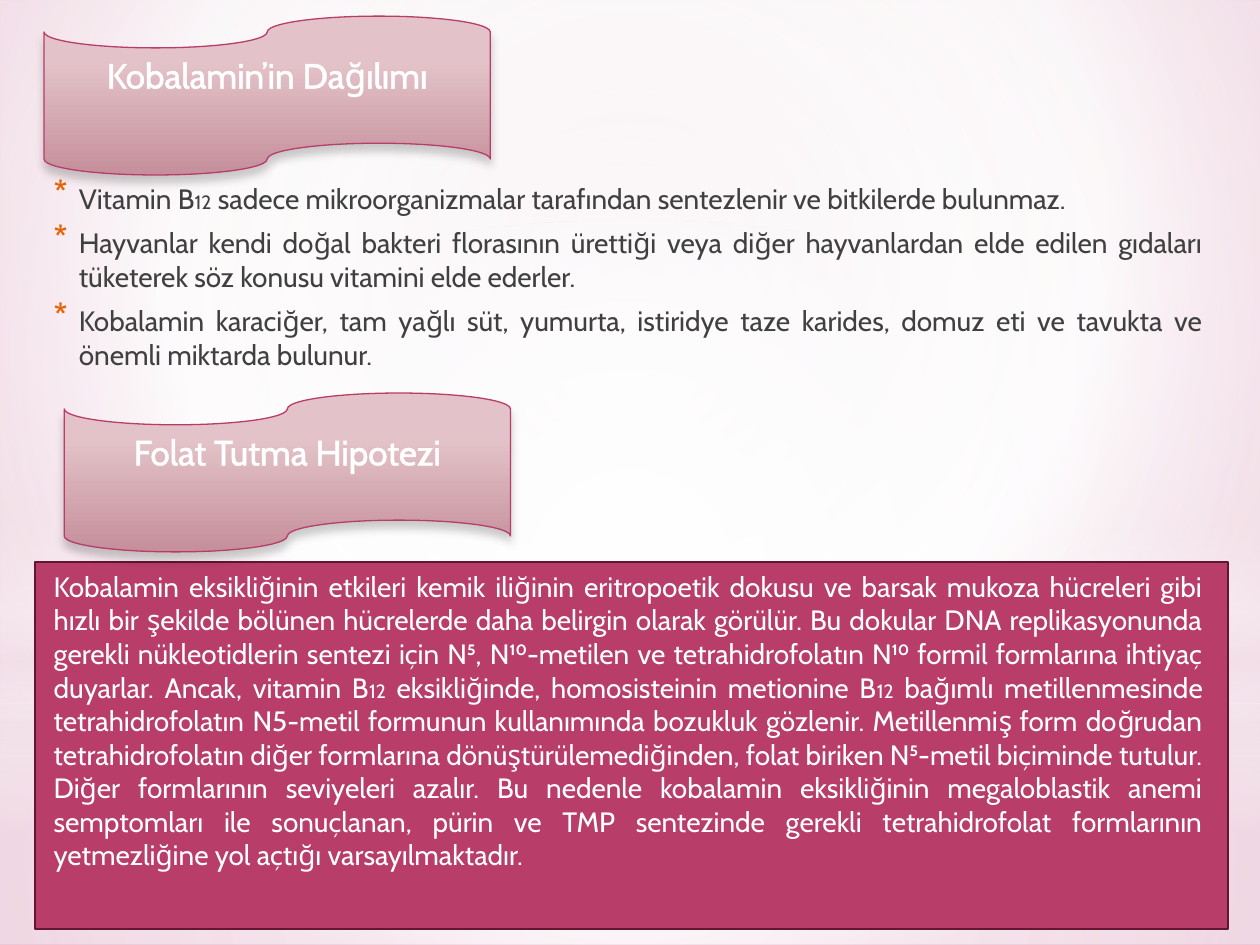
from dataclasses import dataclass

from lxml import etree
from pptx import Presentation
from pptx.dml.color import RGBColor
from pptx.enum.shapes import MSO_SHAPE
from pptx.enum.text import MSO_ANCHOR, MSO_AUTO_SIZE, PP_ALIGN
from pptx.oxml import parse_xml
from pptx.oxml.ns import qn
from pptx.util import Pt

RECT, ELLIPSE, TAPE = MSO_SHAPE.RECTANGLE, MSO_SHAPE.OVAL, MSO_SHAPE.FLOWCHART_PUNCHED_TAPE
JUSTIFY, CENTER = PP_ALIGN.JUSTIFY, PP_ALIGN.CENTER
TOP, MIDDLE = MSO_ANCHOR.TOP, MSO_ANCHOR.MIDDLE
DRAWING_NS = 'xmlns:a="http://schemas.openxmlformats.org/drawingml/2006/main"'
CENTERED = (50, 50, 50, 50)


@dataclass(frozen=True)
class Theme:
    font: str = "Cabin"
    white: str = "FFFFFF"
    ink: str = "404040"
    accent: str = "B83D68"
    accent_dark: str = "621631"
    bullet: str = "E36406"
    tint: str = "F4E7ED"
    heading_size: float = 20
    body_size: float = 16
    index_size: float = 11


@dataclass(frozen=True)
class Box:
    left: float
    top: float
    width: float
    height: float

    def lengths(self):
        return Pt(self.left), Pt(self.top), Pt(self.width), Pt(self.height)


@dataclass(frozen=True)
class Glow:
    shape: int
    box: Box
    stops: tuple  # (position %, colour, opacity %)
    focus: tuple = ()  # left, top, right, bottom %; empty means top to bottom


THEME = Theme()
W, T = THEME.white, THEME.tint
BACKDROP = ((0, "EDDAE2", 100), (60, W, 100), (100, "E09DBC", 100))
BANNER_STOPS = ((28, "E3C3C9", 100), (100, "C58F9B", 100))
GLOWS = (
    Glow(RECT, Box(0, 402, 720, 138), ((0, W, 91), (37, W, 76), (100, T, 79)), CENTERED),
    Glow(RECT, Box(0, 0, 720, 402), ((0, W, 89), (48, W, 62), (100, T, 79)), CENTERED),
    Glow(RECT, Box(0, 296.6, 720, 180),
         ((0, W, 0), (29, W, 30), (45, T, 40), (55, W, 26), (65, T, 60), (100, W, 0))),
    Glow(ELLIPSE, Box(0, 126, 720, 402), ((0, W, 100), (56, W, 0)), CENTERED),
)

# A paragraph is a list of strings; every second one is a small index
DISTRIBUTION = [
    ["Vitamin B", "12", " sadece mikroorganizmalar tarafından sentezlenir ve bitkilerde bulunmaz."],
    ["Hayvanlar kendi doğal bakteri florasının ürettiği veya diğer hayvanlardan elde edilen "
     "gıdaları tüketerek söz konusu vitamini elde ederler."],
    ["Kobalamin karaciğer, tam yağlı süt, yumurta, istiridye taze karides, domuz eti ve tavukta "
     "ve önemli miktarda bulunur."],
]
HYPOTHESIS = [[
    "Kobalamin eksikliğinin etkileri kemik iliğinin eritropoetik dokusu ve barsak mukoza "
    "hücreleri gibi hızlı bir şekilde bölünen hücrelerde daha belirgin olarak görülür. Bu "
    "dokular DNA replikasyonunda gerekli nükleotidlerin sentezi için N⁵, N¹⁰-metilen ve "
    "tetrahidrofolatın N¹⁰ formil formlarına ihtiyaç duyarlar. Ancak, vitamin B",
    "12",
    " eksikliğinde, homosisteinin metionine B",
    "12",
    " bağımlı metillenmesinde tetrahidrofolatın N5-metil formunun kullanımında bozukluk "
    "gözlenir. Metillenmiş form doğrudan tetrahidrofolatın diğer formlarına "
    "dönüştürülemediğinden, folat biriken N⁵-metil biçiminde tutulur. Diğer formlarının "
    "seviyeleri azalır. Bu nedenle kobalamin eksikliğinin megaloblastik anemi semptomları ile "
    "sonuçlanan, pürin ve TMP sentezinde gerekli tetrahidrofolat formlarının yetmezliğine yol "
    "açtığı varsayılmaktadır.",
]]


def gradient(stops: tuple, focus: tuple = ()):
    marks = "".join(
        f'<a:gs pos="{pos * 1000}"><a:srgbClr val="{color}">'
        f'<a:alpha val="{opacity * 1000}"/></a:srgbClr></a:gs>'
        for pos, color, opacity in stops)
    if focus:
        sides = " ".join(f'{side}="{value * 1000}"' for side, value in zip("ltrb", focus))
        course = f'<a:path path="circle"><a:fillToRect {sides}/></a:path>'
    else:
        course = '<a:lin ang="5400000" scaled="0"/>'
    return parse_xml(f'<a:gradFill {DRAWING_NS} rotWithShape="1">'
                     f'<a:gsLst>{marks}</a:gsLst>{course}</a:gradFill>')


def add_panel(slide, kind: int, box: Box, *, color=None, stops=(), focus=(), line=None, weight=0):
    panel = slide.shapes.add_shape(kind, *box.lengths())
    panel.shadow.inherit = False
    if color:
        panel.fill.solid()
        panel.fill.fore_color.rgb = RGBColor.from_string(color)
    else:
        panel.fill.background()
        props = panel.fill._xPr
        props.replace(props.find(qn("a:noFill")), gradient(stops, focus))
    if line:
        panel.line.color.rgb = RGBColor.from_string(line)
        panel.line.width = Pt(weight)
    else:
        panel.line.fill.background()
    return panel


def write_text(frame, paragraphs: list, *, size: float, color: str, align=JUSTIFY, anchor=TOP,
               indent=0.0, hanging=0.0, bullet="", gap=0.0, bottom=3.6, outline=0.0):
    frame.word_wrap = True
    frame.auto_size = MSO_AUTO_SIZE.NONE
    frame.vertical_anchor = anchor
    frame.margin_left = frame.margin_right = Pt(7.2)
    frame.margin_top, frame.margin_bottom = Pt(3.6), Pt(bottom)
    for number, pieces in enumerate(paragraphs):
        para = frame.add_paragraph() if number else frame.paragraphs[0]
        para.alignment = align
        props = para._p.get_or_add_pPr()
        props.set("marL", str(Pt(indent)))
        props.set("indent", str(Pt(-hanging)))
        if bullet:
            tint = etree.SubElement(props, qn("a:buClr"))
            etree.SubElement(tint, qn("a:srgbClr"), val=THEME.bullet)
            etree.SubElement(props, qn("a:buSzPct"), val="130000")
            etree.SubElement(props, qn("a:buChar"), char=bullet)
        para.space_before = Pt(gap if number else 0)
        para.space_after = Pt(3 if gap else 0)
        for place, piece in enumerate(pieces):
            run = para.add_run()
            run.text = piece
            run.font.name = THEME.font
            run.font.size = Pt(THEME.index_size if place % 2 else size)
            run.font.color.rgb = RGBColor.from_string(color)
            if outline:
                run.font._element.insert(0, parse_xml(
                    f'<a:ln {DRAWING_NS} w="{Pt(outline)}"><a:solidFill>'
                    f'<a:srgbClr val="{color}"/></a:solidFill></a:ln>'))


def add_banner(slide, box: Box):
    banner = add_panel(slide, TAPE, box, stops=BANNER_STOPS, line=THEME.accent, weight=0.75)
    effects = banner._element.spPr.find(qn("a:effectLst"))
    effects.append(parse_xml(
        f'<a:outerShdw {DRAWING_NS} blurRad="{Pt(5)}" dist="{Pt(4)}" dir="5400000" '
        'rotWithShape="0"><a:srgbClr val="000000"><a:alpha val="20000"/></a:srgbClr>'
        '</a:outerShdw>'))
    return banner


def write_heading(frame, text: str):
    write_text(frame, [[text]], size=THEME.heading_size, color=THEME.white, align=CENTER,
               anchor=MIDDLE, bottom=27.6, outline=1.45)


def add_body(slide, box: Box, paragraphs: list, **text_format):
    body = slide.shapes.add_textbox(*box.lengths())
    write_text(body.text_frame, paragraphs, size=THEME.body_size, gap=3.2, **text_format)


def main():
    prs = Presentation()
    prs.slide_width, prs.slide_height = Pt(720), Pt(540)
    slide = prs.slides.add_slide(prs.slide_layouts[5])

    # Backdrop with soft glows
    slide.background.fill.solid()
    backdrop = slide.background.fill._xPr
    backdrop.replace(backdrop.find(qn("a:solidFill")), gradient(BACKDROP, (20, 10, 20, 60)))
    for glow in GLOWS:
        add_panel(slide, glow.shape, glow.box, stops=glow.stops, focus=glow.focus)

    # Distribution: banner with the slide title in front, then bullets
    title_box = Box(25.2, 9.2, 255, 90.8)
    add_banner(slide, title_box)
    title = slide.shapes.title
    title.left, title.top, title.width, title.height = title_box.lengths()
    write_heading(title.text_frame, "Kobalamin’in Dağılımı")
    slide.shapes._spTree.append(title._element)
    add_body(slide, Box(20, 100, 674.6, 130.3), DISTRIBUTION, color=THEME.ink,
             indent=18, hanging=14.4, bullet="*")

    # Folate trap hypothesis: panel, text and banner
    add_panel(slide, RECT, Box(20, 321, 681.8, 209.7), color=THEME.accent,
              line=THEME.accent_dark, weight=1.25)
    add_body(slide, Box(20, 321.8, 674.6, 164.2), HYPOTHESIS, color=THEME.white, indent=3.6)
    hypothesis_banner = add_banner(slide, Box(36.7, 224.6, 255, 90.8))
    write_heading(hypothesis_banner.text_frame, "Folat Tutma Hipotezi")

    prs.save("out.pptx")


if __name__ == "__main__":
    main()
